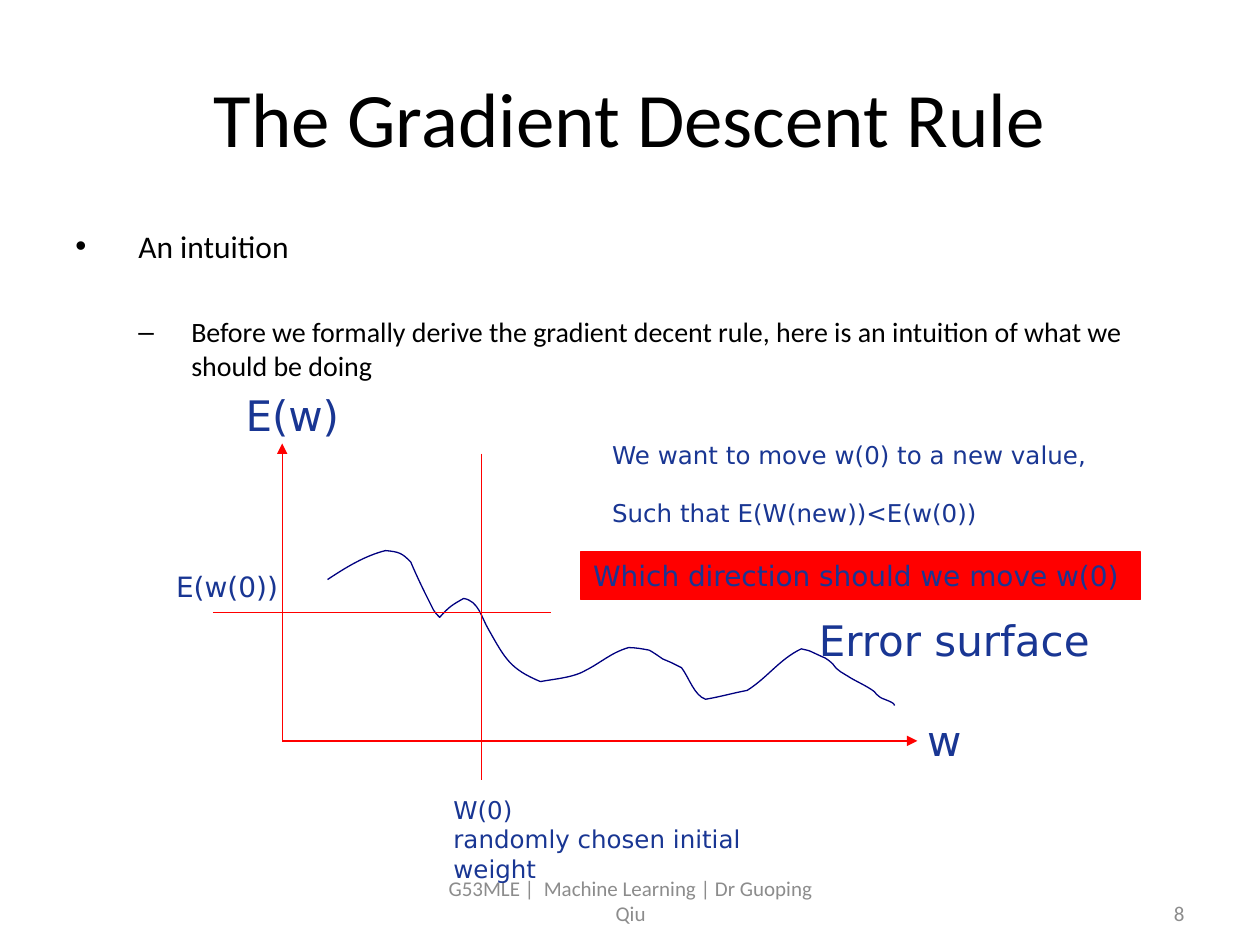
from lxml import etree
from pptx import Presentation
from pptx import util as u
from pptx.dml.color import RGBColor
from pptx.enum import shapes, text
from pptx.oxml.ns import qn

RED, NAVY, BLUE, GREY, BLACK = "FF0000", "000080", "193693", "8C8C8C", "000000"


def color(hex_value):
    return RGBColor.from_string(hex_value)


def write(box, lines, size, font="DejaVu Sans", ink=BLUE, align="LEFT",
          anchor="TOP", wrap=False, gap=0):
    frame = box.text_frame
    frame.word_wrap = wrap
    frame.vertical_anchor = text.MSO_ANCHOR[anchor]
    for index, line in enumerate(lines):
        para = frame.add_paragraph() if index else frame.paragraphs[0]
        para.text = line
        para.alignment = text.PP_ALIGN[align]
        para.space_before = u.Pt(gap if index else 0)
        para.font.size = u.Pt(size)
        para.font.name = font
        para.font.color.rgb = color(ink)
    return frame


deck = Presentation()
deck.slide_width, deck.slide_height = u.Inches(10), u.Inches(7.5)
page = deck.slides.add_slide(deck.slide_layouts[6])

# Title
title = page.shapes.add_textbox(*map(u.Inches, (0.5, 0.3, 9, 1.25)))
write(title, ["The Gradient Descent Rule"], 44, "Calibri", BLACK, "CENTER", "MIDDLE", True)

# Bulleted body
body = page.shapes.add_textbox(*map(u.Inches, (0.5, 1.75, 9, 4.95)))
frame = write(body, [
    "An intuition",
    "Before we formally derive the gradient decent rule, here is an intuition of what we should be doing",
], 18, "Calibri", BLACK, wrap=True)
for para, level, size, before, margin, hang, mark in zip(
        frame.paragraphs, (0, 1), (18, 16), (3.6, 28.8), (0.5, 0.92), (0.5, 0.42), "•–"):
    para.level = level
    para.font.size = u.Pt(size)
    para.space_before = u.Pt(before)
    props = para._p.get_or_add_pPr()
    props.set("marL", str(u.Inches(margin)))
    props.set("indent", str(-u.Inches(hang)))
    etree.SubElement(props, qn("a:buFont")).set("typeface", "Arial")
    etree.SubElement(props, qn("a:buChar")).set("char", mark)
    # Bullet elements come before the default run properties
    props.append(props.find(qn("a:defRPr")))

# Footer and page number
for line, place, align in [
    ("G53MLE |  Machine Learning | Dr Guoping Qiu", (3.42, 6.95, 3.17, 0.4), "CENTER"),
    ("8", (7.17, 7.05, 2.33, 0.4), "RIGHT"),
]:
    box = page.shapes.add_textbox(*map(u.Inches, place))
    write(box, [line], 12, "Calibri", GREY, align, "MIDDLE", True)

# Error curve: each row holds two control points and an end point
start = (2.6, 4.6)
bends = [
    (2.75, 4.5, 2.9, 4.41, 3.06, 4.37),
    (3.17, 4.38, 3.19, 4.39, 3.26, 4.46),
    (3.32, 4.6, 3.37, 4.7, 3.44, 4.84),
    (3.45, 4.86, 3.47, 4.88, 3.49, 4.9),
    (3.56, 4.82, 3.59, 4.8, 3.68, 4.75),
    (3.8, 4.77, 3.82, 4.9, 3.88, 5),
    (4.01, 5.23, 4.05, 5.31, 4.29, 5.41),
    (4.39, 5.39, 4.55, 5.38, 4.65, 5.32),
    (4.77, 5.26, 4.85, 5.18, 4.99, 5.14),
    (5.04, 5.14, 5.1, 5.15, 5.15, 5.16),
    (5.16, 5.16, 5.26, 5.23, 5.26, 5.23),
    (5.28, 5.24, 5.31, 5.25, 5.33, 5.26),
    (5.36, 5.27, 5.38, 5.29, 5.41, 5.3),
    (5.47, 5.38, 5.51, 5.52, 5.6, 5.55),
    (5.72, 5.53, 5.82, 5.5, 5.93, 5.48),
    (6.09, 5.38, 6.19, 5.23, 6.36, 5.15),
    (6.44, 5.17, 6.39, 5.15, 6.52, 5.21),
    (6.56, 5.22, 6.61, 5.27, 6.61, 5.27),
    (6.65, 5.33, 6.69, 5.34, 6.75, 5.38),
    (6.8, 5.41, 6.89, 5.45, 6.94, 5.49),
    (6.95, 5.5, 6.96, 5.52, 6.98, 5.53),
    (7, 5.55, 7.1, 5.57, 7.1, 5.6),
]
builder = page.shapes.build_freeform(*map(u.Inches, start))
builder.add_line_segments(
    [(u.Inches(bend[4]), u.Inches(bend[5])) for bend in bends], close=False)
curve = builder.convert_to_shape()
curve.shadow.inherit = False
curve.fill.background()
curve.line.color.rgb = color(NAVY)
curve.line.width = u.Pt(0.75)
# Bend every straight segment with its control points
for segment, bend in zip(list(curve._element.iter(qn("a:lnTo"))), bends):
    segment.tag = qn("a:cubicBezTo")
    for old in list(segment):
        segment.remove(old)
    for x, y in zip(bend[::2], bend[1::2]):
        point = etree.SubElement(segment, qn("a:pt"))
        point.set("x", str(u.Inches(x) - curve.left))
        point.set("y", str(u.Inches(y) - curve.top))

# Axes with arrowheads, and the guides through w(0)
for x1, y1, x2, y2, arrow in [
    (2.24, 5.88, 2.24, 3.52, True),
    (2.24, 5.88, 7.28, 5.88, True),
    (3.82, 3.6, 3.82, 6.19, False),
    (1.69, 4.86, 4.37, 4.86, False),
]:
    line = page.shapes.add_connector(
        shapes.MSO_CONNECTOR.STRAIGHT, *map(u.Inches, (x1, y1, x2, y2)))
    line.line.color.rgb = color(RED)
    line.line.width = u.Pt(0.75)
    if arrow:
        etree.SubElement(line.line._get_or_add_ln(), qn("a:tailEnd")).set("type", "triangle")
    etree.SubElement(line._element.spPr, qn("a:effectLst"))

# Graph labels and remarks
for lines, place, size, wrap, gap in [
    (["w"], (7.26, 5.62, 0.47, 0.5), 24, False, 0),
    (["E(w)"], (1.85, 3.04, 0.99, 0.5), 24, False, 0),
    (["W(0)", "randomly chosen initial weight"], (3.5, 6.26, 3.19, 0.57), 14, True, 0),
    (["Error surface"], (6.4, 4.83, 2.38, 0.5), 24, False, 0),
    (["We want to move w(0) to a new value,", "Such that E(W(new))<E(w(0))"],
     (4.76, 3.44, 4.1, 0.8), 14, True, 16.3),
    (["E(w(0))"], (1.3, 4.47, 1.07, 0.37), 16, False, 0),
]:
    box = page.shapes.add_textbox(*map(u.Inches, place))
    write(box, lines, size, wrap=wrap, gap=gap)

# Highlighted question
question = page.shapes.add_shape(
    shapes.MSO_SHAPE.RECTANGLE, *map(u.Inches, (4.61, 4.38, 4.44, 0.38)))
question.shadow.inherit = False
question.fill.solid()
question.fill.fore_color.rgb = color(RED)
question.line.color.rgb = color(RED)
question.line.width = u.Pt(0.75)
write(question, ["Which direction should we move w(0)"], 16)

deck.save("out.pptx")
